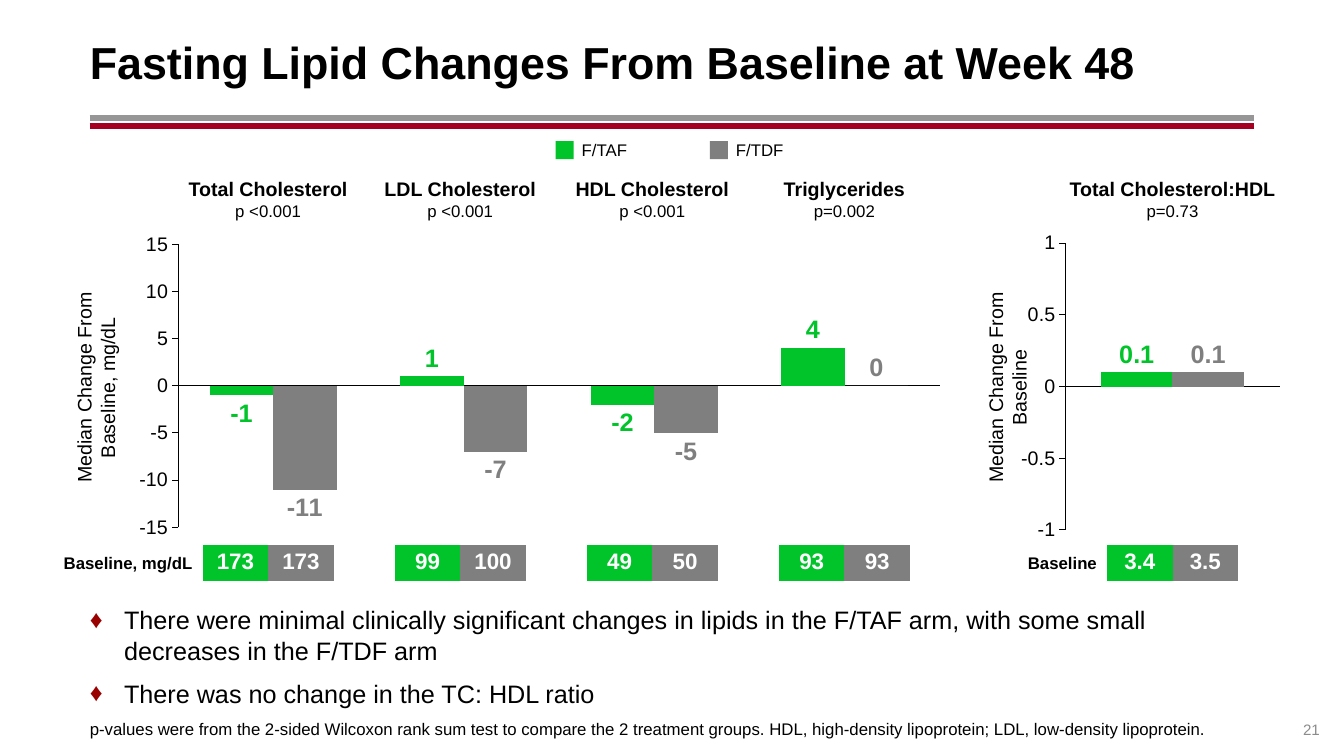
"""Build the slide on fasting lipid changes from baseline at week 48."""
from lxml import etree
from pptx import Presentation
from pptx import util as u
from pptx.chart.data import CategoryChartData
from pptx.dml.color import RGBColor
from pptx.enum import chart as ch, shapes, text
from pptx.oxml import parse_xml
from pptx.oxml.ns import nsdecls, qn

COLORS = {"taf": "00C42A", "tdf": "7F7F7F", "ink": "000000", "paper": "FFFFFF",
          "rule": "969696", "accent": "A50021", "bullet": "990000", "number": "8C8C8C"}
ARMS = ("taf", "tdf")
LEFT, WIDTH = 0.89, 11.55
CELL_W, CELL_H, BASELINE_TOP = 0.65, 0.35, 5.41
CENTER, MIDDLE, BOTTOM = text.PP_ALIGN.CENTER, text.MSO_ANCHOR.MIDDLE, text.MSO_ANCHOR.BOTTOM

deck = Presentation()
deck.slide_width, deck.slide_height = u.Inches(13.33), u.Inches(7.5)
slide = deck.slides.add_slide(deck.slide_layouts[6])


def rgb(name):
    return RGBColor.from_string(COLORS[name])


def write(frame, *lines, size=12, color="ink", bold=False, align=text.PP_ALIGN.LEFT,
          anchor=text.MSO_ANCHOR.TOP, inset=(0, 0), before=0, spacing=None, bullet=None):
    frame.word_wrap = True
    frame.vertical_anchor = anchor
    frame.margin_left = frame.margin_right = u.Inches(inset[0])
    frame.margin_top = frame.margin_bottom = u.Inches(inset[1])
    for index, line in enumerate(lines):
        words, line_size, line_bold = line if isinstance(line, tuple) else (line, size, bold)
        para = frame.paragraphs[0] if index == 0 else frame.add_paragraph()
        para.alignment, para.space_before = align, u.Pt(before)
        if spacing:
            para.line_spacing = spacing
        run = para.add_run()
        run.text = words
        run.font.name, run.font.size, run.font.bold = "Arial", u.Pt(line_size), line_bold
        run.font.color.rgb = rgb(color)
        if bullet:
            props = para._p.get_or_add_pPr()
            props.set("marL", str(u.Inches(0.34)))
            props.set("indent", str(-u.Inches(0.34)))
            tint = etree.SubElement(props, qn("a:buClr"))
            etree.SubElement(tint, qn("a:srgbClr"), val=COLORS["bullet"])
            etree.SubElement(props, qn("a:buFont"), typeface="Arial")
            etree.SubElement(props, qn("a:buChar"), char=bullet)


def textbox(left, top, width, height):
    box = slide.shapes.add_textbox(*map(u.Inches, (left, top, width, height)))
    return box.text_frame


for y, color in ((1.17, "rule"), (1.25, "accent")):
    rule = slide.shapes.add_connector(shapes.MSO_CONNECTOR.STRAIGHT, u.Inches(LEFT), u.Inches(y),
                                      u.Inches(LEFT + WIDTH), u.Inches(y))
    rule.line.color.rgb, rule.line.width = rgb(color), u.Pt(4.25)
    etree.SubElement(rule._element.spPr, qn("a:effectLst"))

write(textbox(LEFT, 0.18, WIDTH, 0.86), "Fasting Lipid Changes From Baseline at Week 48",
      size=32, bold=True, anchor=MIDDLE, inset=(0, 0.05))
write(textbox(LEFT, 5.95, WIDTH - 0.1, 1.09),
      "There were minimal clinically significant changes in lipids in the F/TAF arm, "
      "with some small decreases in the F/TDF arm",
      "There was no change in the TC: HDL ratio",
      size=18, inset=(0, 0.05), before=9, bullet="♦")
write(textbox(LEFT, 6.83, WIDTH, 0.5),
      "p-values were from the 2-sided Wilcoxon rank sum test to compare the 2 treatment groups. "
      "HDL, high-density lipoprotein; LDL, low-density lipoprotein.", anchor=BOTTOM)
write(textbox(LEFT + WIDTH, 6.93, 0.65, 0.4), "21", size=10.8, color="number",
      align=text.PP_ALIGN.RIGHT, anchor=BOTTOM)

for column, (arm, label) in enumerate(zip(ARMS, ("F/TAF", "F/TDF"))):
    key_left = 5.51 + 1.53 * column
    key = slide.shapes.add_shape(shapes.MSO_SHAPE.RECTANGLE, u.Inches(key_left), u.Inches(1.4),
                                 u.Inches(0.18), u.Inches(0.18))
    key.shadow.inherit = False
    key.fill.solid()
    key.fill.fore_color.rgb = rgb(arm)
    key.line.fill.background()
    write(textbox(key_left + 0.26, 1.38, 0.8, 0.24), label, anchor=MIDDLE, spacing=0.9)

panels = [
    {"chart": (1.23, 2.24, 8.25, 3.18), "plot": (0.065, 0.058, 0.916, 0.883),
     "limit": 15, "step": 5, "axis": "Median Change From Baseline, mg/dL", "axis_left": 0.55,
     "row": "Baseline, mg/dL", "first": 2.66,
     "groups": [("Total Cholesterol", "p <0.001", (-1, -11), ("173", "173")),
                ("LDL Cholesterol", "p <0.001", (1, -7), ("99", "100")),
                ("HDL Cholesterol", "p <0.001", (-2, -5), ("49", "50")),
                ("Triglycerides", "p=0.002", (4, 0), ("93", "93"))]},
    {"chart": (10.07, 2.24, 2.67, 3.19), "plot": (0.186, 0.054, 0.796, 0.892),
     "limit": 1, "step": 0.5, "axis": "Median Change From Baseline", "axis_left": 9.59,
     "row": "Baseline", "first": 11.63,
     "groups": [("Total Cholesterol:HDL", "p=0.73", (0.1, 0.1), ("3.4", "3.5"))]},
]

for panel in panels:
    groups = panel["groups"]
    changes = CategoryChartData()
    changes.categories = [group[0] for group in groups]
    for arm, label in enumerate(("F/TAF", "F/TDF")):
        changes.add_series(label, [group[2][arm] for group in groups])
    chart = slide.shapes.add_chart(ch.XL_CHART_TYPE.COLUMN_CLUSTERED,
                                   *map(u.Inches, panel["chart"]), changes).chart
    chart.has_legend = chart.has_title = False
    chart.font.name, chart.font.size, chart.font.color.rgb = "Arial", u.Pt(14), rgb("ink")

    x, y, w, h = panel["plot"]
    plot_area = chart._chartSpace.chart.plotArea
    for old in plot_area.findall(qn("c:layout")):
        plot_area.remove(old)
    plot_area.insert(0, parse_xml(
        f'<c:layout {nsdecls("c")}><c:manualLayout><c:layoutTarget val="inner"/>'
        f'<c:xMode val="edge"/><c:yMode val="edge"/><c:x val="{x}"/><c:y val="{y}"/>'
        f'<c:w val="{w}"/><c:h val="{h}"/></c:manualLayout></c:layout>'))

    analytes, change = chart.category_axis, chart.value_axis
    for axis in (analytes, change):
        axis.has_major_gridlines = False
        axis.minor_tick_mark = ch.XL_TICK_MARK.NONE
        axis.format.line.color.rgb, axis.format.line.width = rgb("ink"), u.Pt(0.75)
    analytes.major_tick_mark = ch.XL_TICK_MARK.NONE
    analytes.tick_label_position = ch.XL_TICK_LABEL_POSITION.NONE
    change.major_tick_mark = ch.XL_TICK_MARK.OUTSIDE
    change.minimum_scale, change.maximum_scale = -panel["limit"], panel["limit"]
    change.major_unit = panel["step"]

    columns = chart.plots[0]
    columns.gap_width, columns.overlap, columns.vary_by_categories = 100, 0, False
    for arm, series in zip(ARMS, columns.series):
        series.invert_if_negative = False
        series.format.fill.solid()
        series.format.fill.fore_color.rgb = rgb(arm)
        labels = series.data_labels
        labels.show_value, labels.position = True, ch.XL_LABEL_POSITION.OUTSIDE_END
        labels.font.name, labels.font.size, labels.font.bold = "Arial", u.Pt(18), True
        labels.font.color.rgb = rgb(arm)

    axis_title = textbox(panel["axis_left"], 2.49, 0.68, 2.71)
    write(axis_title, panel["axis"], size=14, align=CENTER, anchor=BOTTOM, inset=(0.1, 0.05))
    axis_title._txBody.bodyPr.set("vert", "vert270")
    write(textbox(panel["first"] - CELL_W - 1.6, 5.43, 1.5, 0.3), panel["row"],
          bold=True, align=text.PP_ALIGN.RIGHT, inset=(0, 0.05))

    for index, (analyte, p_value, _, baselines) in enumerate(groups):
        center = panel["first"] + 1.905 * index
        write(textbox(center - 1.12, 1.7, 2.24, 0.54), (analyte, 14, True), (p_value, 12, False),
              align=CENTER, anchor=MIDDLE, inset=(0, 0.05))
        table = slide.shapes.add_table(1, 2, u.Inches(center - CELL_W), u.Inches(BASELINE_TOP),
                                       u.Inches(2 * CELL_W), u.Inches(CELL_H)).table
        table.first_row = table.horz_banding = False
        table._tbl.tblPr.find(qn("a:tableStyleId")).text = "{2D5ABB26-0587-4C30-8999-92F81FD0307C}"
        for arm, cell, baseline in zip(ARMS, table.rows[0].cells, baselines):
            cell.fill.solid()
            cell.fill.fore_color.rgb = rgb(arm)
            write(cell.text_frame, baseline, size=16, color="paper", bold=True, align=CENTER)
            cell.margin_left = cell.margin_right = u.Inches(0.04)
            cell.margin_top = cell.margin_bottom = u.Inches(0.04)

deck.save("out.pptx")
